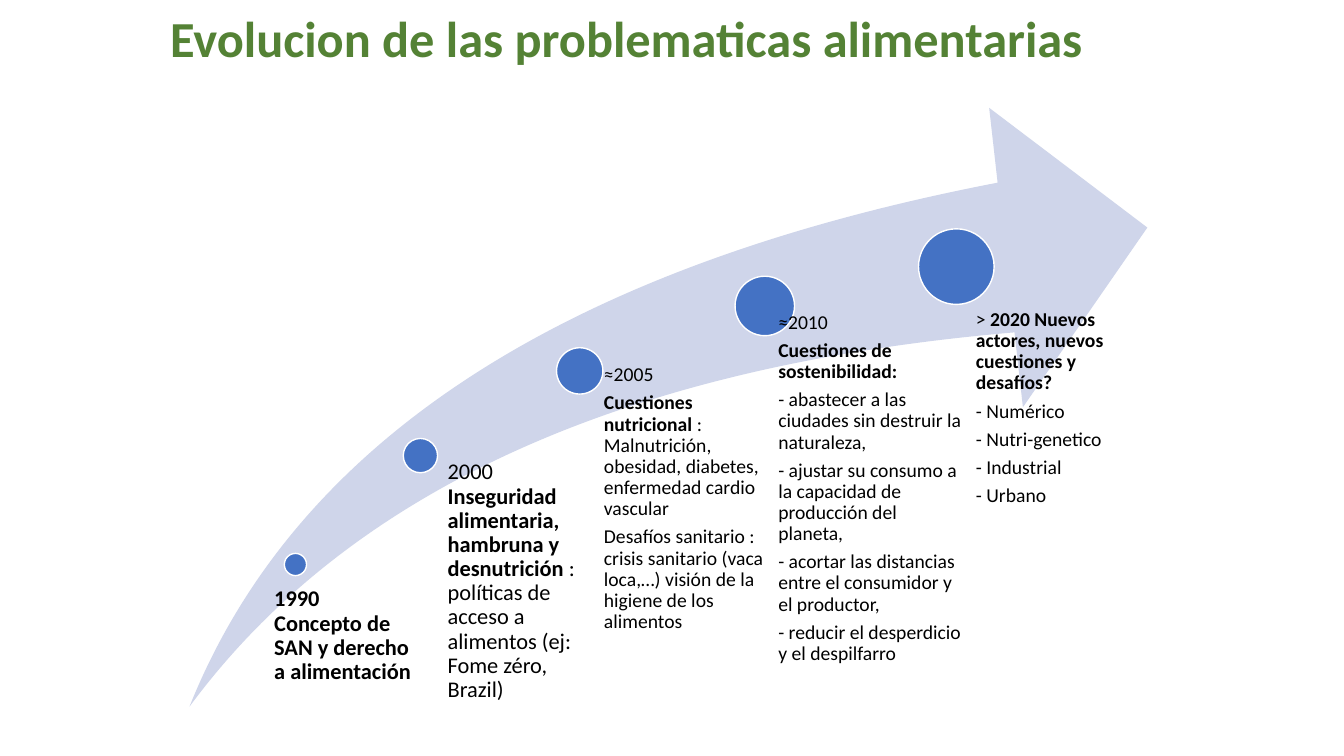
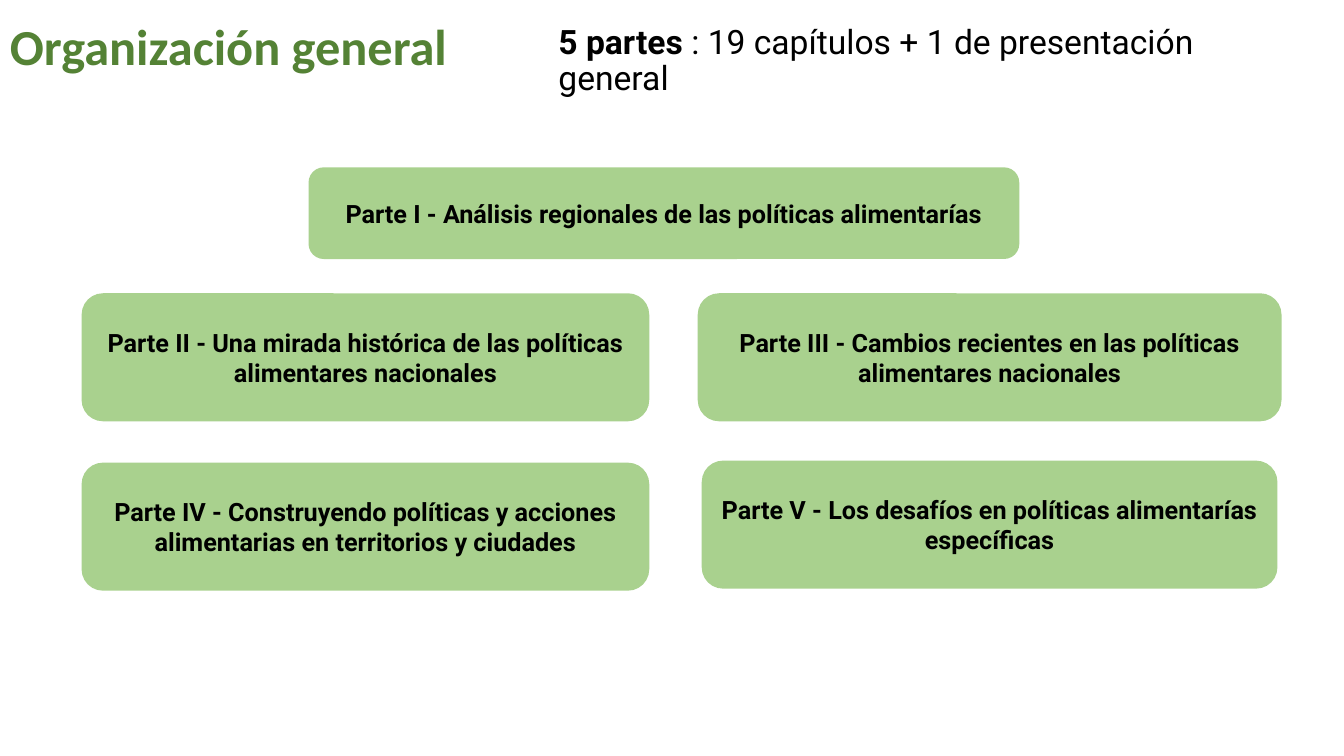
"""Build two slides on food policy: a timeline arrow and an outline of parts."""
from pptx import Presentation, util as u
from pptx.dml.color import RGBColor
from pptx.enum import shapes, text as t

GREEN, LEAF, BLUE, PALE = "548235", "A9D18E", "4472C4", "CFD5EA"
KINDS = shapes.MSO_SHAPE


def write(shape, words, size=18, font="Calibri", color="000000", bold=False,
          gap=0, lead=0.9, inset=None, anchor="TOP", align="LEFT"):
    """Fill a shape with one paragraph per line; asterisks enclose bold text."""
    frame = shape.text_frame
    frame.word_wrap = True
    frame.vertical_anchor = getattr(t.MSO_ANCHOR, anchor)
    if inset is not None:
        frame.margin_left = u.Inches(inset)
        frame.margin_top = frame.margin_right = frame.margin_bottom = 0
    for i, line in enumerate(words.split("\n")):
        para = frame.add_paragraph() if i else frame.paragraphs[0]
        para.alignment = getattr(t.PP_ALIGN, align)
        para.line_spacing = lead
        para.space_after = u.Pt(gap)
        for j, part in enumerate(line.split("*")):
            if part:
                run = para.add_run()
                run.text = part
                run.font.size = u.Pt(size)
                run.font.name = font
                run.font.bold = bold or j % 2 == 1
                run.font.color.rgb = RGBColor.from_string(color)


def draw(slide, kind, box, fill, line=None):
    """Add a flat preset shape with a fill and an optional outline."""
    shape = slide.shapes.add_shape(kind, *map(u.Inches, box))
    shape.shadow.inherit = False
    shape.fill.solid()
    shape.fill.fore_color.rgb = RGBColor.from_string(fill)
    if line:
        shape.line.color.rgb = RGBColor.from_string(line)
        shape.line.width = u.Pt(1)
    else:
        shape.line.fill.background()
    return shape


deck = Presentation()
deck.slide_width, deck.slide_height = u.Inches(13.33), u.Inches(7.5)

pages = []
for title, box in [
    ("Evolucion de las problematicas alimentarias", (1.59, 0, 10.43, 0.81)),
    ("Organización general", (0, -0.08, 11.5, 1.14)),
]:
    page = deck.slides.add_slide(deck.slide_layouts[6])
    head = page.shapes.add_textbox(*map(u.Inches, box))
    write(head, title, size=36, color=GREEN, bold=True, anchor="MIDDLE")
    pages.append(page)
time, plan = pages

arrow = draw(time, KINDS.SWOOSH_ARROW, (1.88, 1.07, 9.5, 5.94), PALE)
arrow.adjustments[0] = arrow.adjustments[1] = 0.25

stages = [
    ((2.82, 5.49, 0.22), (2.6, 5.83, 1.57, 0.96), 0.12, 16, 0,
     "*1990*\n*Concepto de SAN y derecho a alimentación*"),
    ((4, 4.35, 0.34), (4.26, 4.57, 1.58, 2.32), 0.18, 16, 0,
     "2000\n*Inseguridad alimentaria, hambruna y desnutrición *"
     ": políticas de acceso a alimentos (ej: Fome zéro, Brazil)"),
    ((5.52, 3.45, 0.46), (5.75, 3.62, 1.83, 3.44), 0.24, 14, 4.9,
     "≈2005\n*Cuestiones nutricional *: Malnutrición, obesidad, diabetes, "
     "enfermedad cardio vascular\n"
     "Desafíos sanitario : crisis sanitario (vaca loca,…) visión de la "
     "higiene de los alimentos"),
    ((7.29, 2.74, 0.59), (7.41, 3.1, 2.16, 4.3), 0.31, 14, 4.9,
     "≈2010\n*Cuestiones de sostenibilidad:*\n"
     "- abastecer a las ciudades sin destruir la naturaleza,\n"
     "- ajustar su consumo a la capacidad de producción del planeta,\n"
     "- acortar las distancias entre el consumidor y el productor,\n"
     "- reducir el desperdicio y el despilfarro"),
    ((9.11, 2.27, 0.75), (9.28, 3.07, 2.14, 3.18), 0.4, 14, 4.9,
     "> *2020 Nuevos actores, nuevos cuestiones y desafíos?*\n"
     "- Numérico\n- Nutri-genetico\n- Industrial\n- Urbano"),
]
for (left, top, size), box, inset, points, gap, words in stages:
    draw(time, KINDS.OVAL, (left, top, size, size), BLUE, line="FFFFFF")
    note = time.shapes.add_textbox(*map(u.Inches, box))
    write(note, words, size=points, gap=gap, inset=inset)

count = plan.shapes.add_textbox(*map(u.Inches, (5.44, 0.2, 7.05, 0.59)))
write(count, "*5 partes *: 19 capítulos + 1 de presentación general",
      size=24, font="Roboto")

parts = [
    ((3.06, 1.66, 7.05, 0.91),
     "Parte I - Análisis regionales de las políticas alimentarías"),
    ((0.81, 2.91, 5.63, 1.27),
     "Parte II - Una mirada histórica de las políticas alimentares nacionales"),
    ((6.92, 2.91, 5.79, 1.27),
     "Parte III - Cambios recientes en las políticas alimentares nacionales"),
    ((0.81, 4.59, 5.63, 1.27),
     "Parte IV - Construyendo políticas y acciones alimentarias en "
     "territorios y ciudades"),
    ((6.96, 4.57, 5.71, 1.27),
     "Parte V - Los desafíos en políticas alimentarías específicas"),
]
for box, words in parts:
    card = draw(plan, KINDS.ROUNDED_RECTANGLE, box, LEAF)
    write(card, words, font="Roboto", bold=True, lead=1,
          anchor="MIDDLE", align="CENTER")

deck.save("out.pptx")
